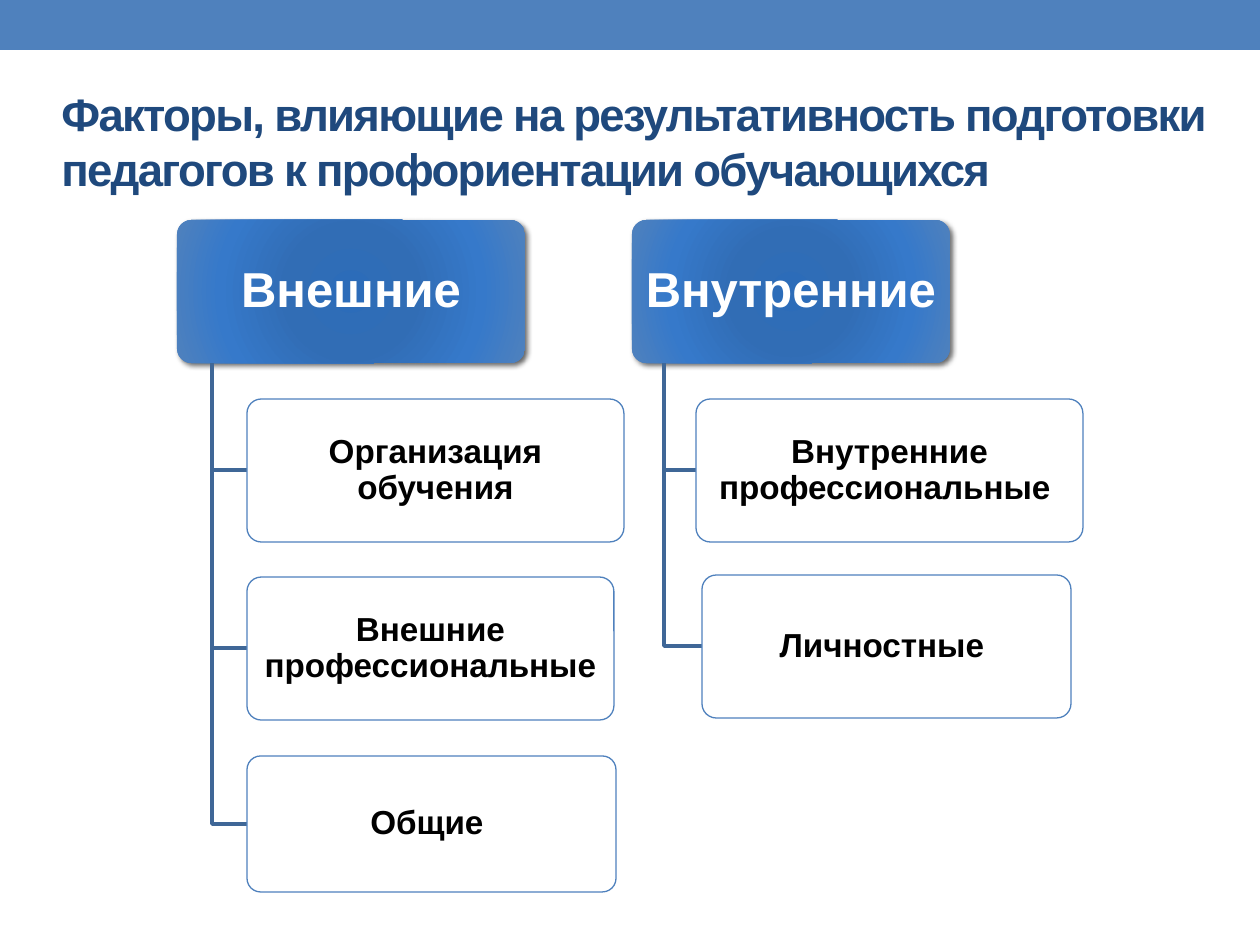
from pptx import Presentation
from pptx import util as u
from pptx.dml.color import RGBColor
from pptx.enum import shapes, text
from pptx.oxml import parse_xml
from pptx.oxml.ns import nsdecls, qn

SCALE = u.Inches(1) / 126
HUES = {
    "bar": "4F81BD", "title": "1F497D", "line": "3F6797",
    "white": "FFFFFF", "black": "000000",
}
STOPS = [(0, "2C6CB9"), (34, "316DB5"), (70, "3679CA"), (100, "4F81BD")]
TOP, HIGH = 220, 143
GROUPS = [
    ("Внешние", 177, 348, [
        ("Организация обучения", 247, 399, 377, 143),
        ("Внешние профессиональные", 247, 577, 367, 143),
        ("Общие ", 247, 756, 369, 136),
    ]),
    ("Внутренние", 632, 318, [
        ("Внутренние профессиональные ", 696, 399, 387, 143),
        ("Личностные ", 702, 575, 369, 143),
    ]),
]


def px(n):
    return round(n * SCALE)


def hue(name):
    return RGBColor.from_string(HUES[name])


class Deck:
    def __init__(self):
        self.prs = Presentation()
        self.prs.slide_width, self.prs.slide_height = px(1260), px(945)
        self.slide = self.prs.slides.add_slide(self.prs.slide_layouts[6])
        self.font = "Arial"

    def shape(self, kind, x, y, w, h, fill):
        item = self.slide.shapes.add_shape(kind, px(x), px(y), px(w), px(h))
        item.shadow.inherit = False
        item.fill.solid()
        item.fill.fore_color.rgb = hue(fill)
        item.line.fill.background()
        return item

    def label(self, item, words, size, color, align, space):
        frame = item.text_frame
        frame.text = words
        frame.word_wrap = True
        frame.vertical_anchor = text.MSO_ANCHOR.MIDDLE
        line = frame.paragraphs[0]
        line.alignment, line.line_spacing = align, space
        run = line.runs[0]
        run.font.name, run.font.size, run.font.bold = self.font, u.Pt(size), True
        run.font.color.rgb = hue(color)
        return run

    def title(self, words, x, y, w, h):
        box = self.slide.shapes.add_textbox(px(x), px(y), px(w), px(h))
        run = self.label(box, words, 26, "title", text.PP_ALIGN.LEFT, 1.0)
        run._r.get_or_add_rPr().set("spc", "-100")

    def card(self, words, x, y, w, h, fill, size, color, side, edge):
        item = self.shape(shapes.MSO_SHAPE.ROUNDED_RECTANGLE, x, y, w, h, fill)
        item.adjustments[0] = 0.1
        self.label(item, words, size, color, text.PP_ALIGN.CENTER, 0.9)
        frame = item.text_frame
        frame.margin_left = frame.margin_right = px(side)
        frame.margin_top = frame.margin_bottom = px(edge)
        return item

    def head(self, words, x, y, w, h):
        item = self.card(words, x, y, w, h, "bar", 28, "white", 3, 1)
        props = item._element.spPr
        stops = "".join(
            f'<a:gs pos="{at * 1000}"><a:srgbClr val="{tone}"/></a:gs>'
            for at, tone in STOPS)
        grad = parse_xml(
            f'<a:gradFill {nsdecls("a")} rotWithShape="1"><a:gsLst>{stops}</a:gsLst>'
            '<a:path path="circle"><a:fillToRect l="100000" t="100000" '
            'r="100000" b="100000"/></a:path></a:gradFill>')
        props.replace(props.find(qn("a:solidFill")), grad)
        props.find(qn("a:effectLst")).append(parse_xml(
            f'<a:outerShdw {nsdecls("a")} blurRad="38100" dist="25400" '
            'dir="2700000" rotWithShape="0"><a:srgbClr val="000000">'
            '<a:alpha val="60000"/></a:srgbClr></a:outerShdw>'))

    def leaf(self, words, x, y, w, h):
        item = self.card(words, x, y, w, h, "white", 19, "black", 1, 0)
        item.line.color.rgb = hue("bar")
        item.line.width = u.Pt(0.75)
        tone = item._element.spPr.find(qn("a:solidFill"))[0]
        tone.append(parse_xml(f'<a:alpha {nsdecls("a")} val="90000"/>'))

    def elbow(self, x, y, right, low):
        pen = self.slide.shapes.build_freeform(x, y, scale=SCALE)
        pen.add_line_segments([(x, low), (right, low)], close=False)
        item = pen.convert_to_shape()
        item.shadow.inherit = False
        item.fill.background()
        item.line.color.rgb = hue("line")
        item.line.width = u.Pt(2.08)


def main():
    deck = Deck()
    deck.shape(shapes.MSO_SHAPE.RECTANGLE, 0, 0, 1260, 50, "bar")
    deck.title("Факторы, влияющие на результативность подготовки педагогов "
               "к профориентации обучающихся", 49, 73, 1172, 136)
    for name, x, w, leaves in GROUPS:
        deck.head(name, x, TOP, w, HIGH)
        stem = x + round(w / 10)
        for words, left, y, wide, high in leaves:
            deck.elbow(stem, TOP + HIGH, left, y + high // 2)
            deck.leaf(words, left, y, wide, high)
    deck.prs.save("out.pptx")


if __name__ == "__main__":
    main()
